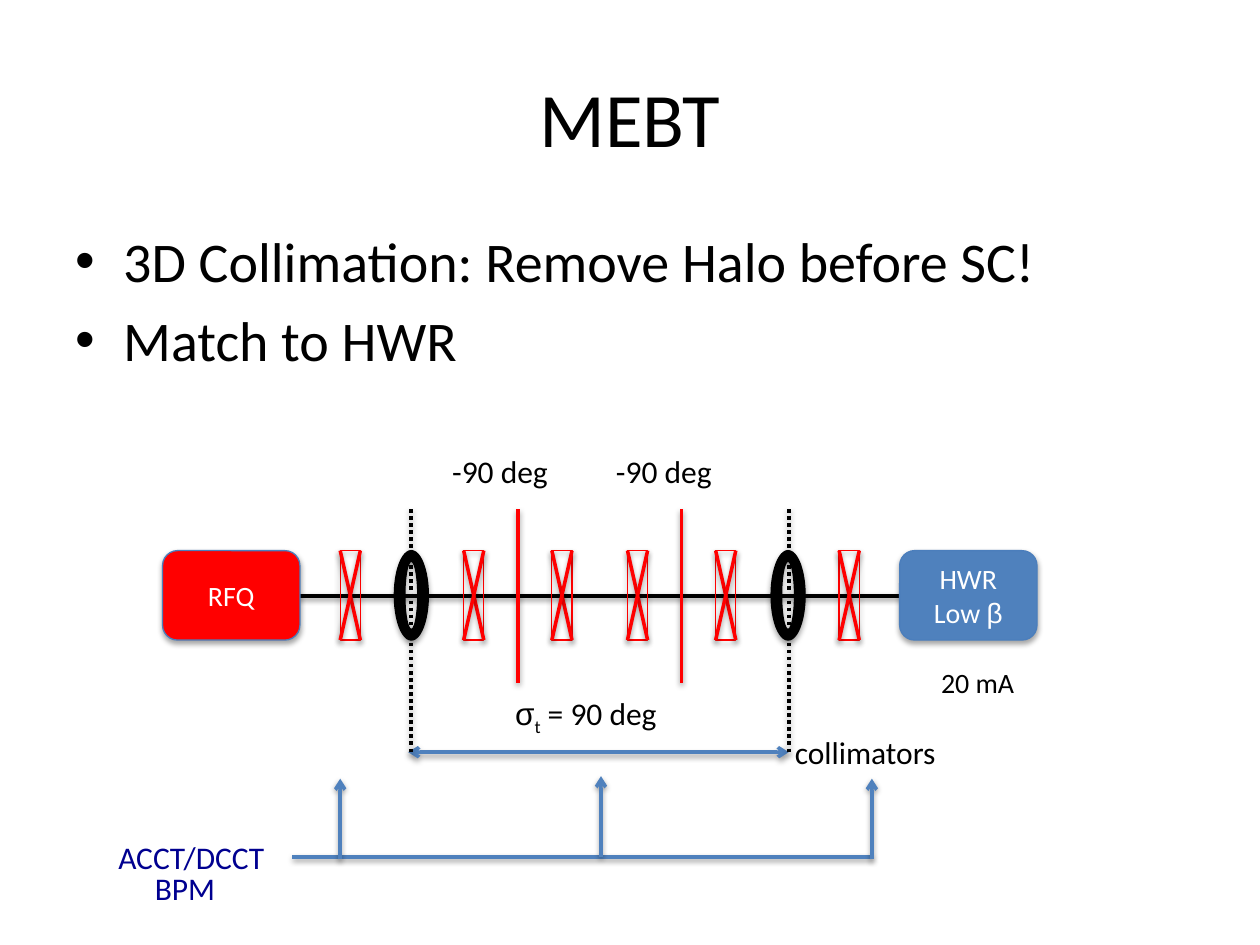
import lxml.etree
import pptx
import pptx.dml.color
import pptx.enum.dml
import pptx.enum.shapes
import pptx.enum.text
import pptx.oxml.ns
import pptx.util

PX = 9144  # EMU per px, 100 px to the inch
COLORS = {
    "text": "000000",
    "white": "FFFFFF",
    "red": "FF0000",
    "blue": "4F81BD",
    "outline": "4B7EBC",
    "navy": "000090",
}
SHAPES = pptx.enum.shapes.MSO_SHAPE
ALIGN = pptx.enum.text.PP_ALIGN
ANCHOR = pptx.enum.text.MSO_ANCHOR


def emu(*lengths):
    return [pptx.util.Emu(length * PX) for length in lengths]


def rgb(color):
    return pptx.dml.color.RGBColor.from_string(COLORS[color])


def add_child(parent, tag, **attributes):
    child = lxml.etree.SubElement(parent, pptx.oxml.ns.qn(tag))
    for key, value in attributes.items():
        child.set(key, str(value))
    return child


def add_shadow(effects, alpha, distance):
    shadow = add_child(effects, "a:outerShdw", blurRad=40000, dist=distance,
                       dir=5400000, rotWithShape=0)
    black = add_child(shadow, "a:srgbClr", val=COLORS["text"])
    add_child(black, "a:alpha", val=alpha * 1000)


def add_line(slide, start, end, color, arrows=(), dash=None):
    """Arrows names the ends that get a head: a:headEnd is the start, a:tailEnd the end."""
    line = slide.shapes.add_connector(
        pptx.enum.shapes.MSO_CONNECTOR.STRAIGHT, *emu(*start, *end))
    line.line.color.rgb = rgb(color)
    line.line.width = pptx.util.Pt(2)
    if dash:
        line.line.dash_style = dash
    for arrow in arrows:
        add_child(line.line._get_or_add_ln(), arrow, type="arrow")
    add_shadow(add_child(line._element.spPr, "a:effectLst"), 38, 20000)


def add_block(slide, kind, box, fill, outline):
    block = slide.shapes.add_shape(kind, *emu(*box))
    block.shadow.inherit = False
    if fill:
        block.fill.solid()
        block.fill.fore_color.rgb = rgb(fill)
    else:
        block.fill.background()
    block.line.color.rgb = rgb(outline)
    block.line.width = pptx.util.Pt(0.75)
    add_shadow(block._element.spPr.find(pptx.oxml.ns.qn("a:effectLst")), 35, 23000)
    return block


def add_run(paragraph, text, size, color="text", **formats):
    run = paragraph.add_run()
    run.text = text
    run.font.color.rgb = rgb(color)
    for key, value in {"size": pptx.util.Pt(size), "name": "Calibri", **formats}.items():
        setattr(run.font, key, value)
    return run


def add_label(slide, box, text="", size=18, color="text"):
    label = slide.shapes.add_textbox(*emu(*box))
    label.text_frame.word_wrap = False
    paragraph = label.text_frame.paragraphs[0]
    if text:
        add_run(paragraph, text, size, color)
    return paragraph


def add_title(slide, box):
    title = slide.shapes.title
    for key, value in zip(("left", "top", "width", "height"), emu(*box)):
        setattr(title, key, value)
    title.text_frame.vertical_anchor = ANCHOR.MIDDLE
    title.text_frame.paragraphs[0].alignment = ALIGN.CENTER
    add_run(title.text_frame.paragraphs[0], "MEBT", 44)


def add_goals(slide, box):
    frame = slide.shapes.add_textbox(*emu(*box)).text_frame
    frame.word_wrap = True
    for i, goal in enumerate(("3D Collimation: Remove Halo before SC!", "Match to HWR")):
        paragraph = frame.add_paragraph() if i else frame.paragraphs[0]
        paragraph.space_before = pptx.util.Pt(6.4)
        properties = paragraph._p.get_or_add_pPr()
        properties.set("marL", str(38 * PX))
        properties.set("indent", str(-38 * PX))
        add_child(properties, "a:buFont", typeface="Arial")
        add_child(properties, "a:buChar", char="•")
        add_run(paragraph, goal, 32)


def add_stage(slide, box, fill, *lines):
    """Rounded block at an end of the beam; each line is a list of (text, font)."""
    stage = add_block(slide, SHAPES.ROUNDED_RECTANGLE, box, fill, "outline")
    frame = stage.text_frame
    frame.vertical_anchor = ANCHOR.MIDDLE
    for i, line in enumerate(lines):
        paragraph = frame.add_paragraph() if i else frame.paragraphs[0]
        paragraph.alignment = ALIGN.CENTER
        for text, font in line:
            add_run(paragraph, text, 16, "white", name=font)


def add_magnet(slide, left, top, width, height):
    right, bottom = left + width, top + height
    add_block(slide, SHAPES.RECTANGLE, (left, top, width, height), None, "red")
    add_line(slide, (left, top), (right, bottom), "red")
    add_line(slide, (right, top), (left, bottom), "red")


def add_beamline(slide, box):
    left, top, width, height = box
    block_top, block_height = top + 84, 71
    stage_width, magnet_width, ring_width = 109, 16, 27

    def mirrored(offsets, part_width=0):
        """Left edges of the parts, then of their mirror images."""
        return [left + x for x in offsets] + [
            left + width - x - part_width for x in reversed(offsets)]

    add_line(slide, (left + 64, top + 120), (left + width - 46, top + 120), "text")
    add_stage(slide, (left, block_top, stage_width, block_height), "red",
              [("RFQ", "Calibri")])
    for x in mirrored((141, 239, 309), magnet_width):
        add_magnet(slide, x, block_top, magnet_width, block_height)
    for x in mirrored((184,), ring_width):
        ring = add_block(slide, SHAPES.DONUT, (x, block_top, ring_width, block_height),
                         "text", "text")
        ring.adjustments[0] = 0.31
    for x in mirrored((282,)):
        add_line(slide, (x, top + 51), (x, top + 189), "red")
        add_label(slide, (x - 62, top + 1, 122, 51), "-90 deg")

    axes = mirrored((197,))
    bottom = top + height
    add_line(slide, (axes[0] - 2, bottom), (axes[1], bottom), "blue",
             ("a:headEnd", "a:tailEnd"))
    advance = add_label(slide, (left + 270, top + 193, 134, 40))
    add_run(advance, "σ", 18, name="Arial")
    subscript = add_run(advance, "t", 18)
    subscript.font._element.set("baseline", "-25000")
    add_run(advance, " = 90 deg", 18)
    add_stage(slide, (left + width - stage_width, block_top, stage_width, block_height),
              "blue", [("HWR", "Calibri")], [("Low ", "Calibri"), ("β", "Arial")])
    for x in axes:
        add_line(slide, (x, top + 51), (x, bottom), "text",
                 dash=pptx.enum.dml.MSO_LINE.ROUND_DOT)
    add_label(slide, (left + 608, top + 170, 79, 37), "20 mA", 16)
    add_label(slide, (left + 492, top + 224, 134, 40), "collimators")


def add_diagnostics(slide, box):
    left, top, width, height = box
    bus = top + height
    right = left + width
    add_label(slide, (left, bus - 20, 139, 40), "ACCT/DCCT", color="navy")
    add_label(slide, (left + 29, bus + 5, 69, 40), "BPM", color="navy")
    add_line(slide, (left + 148, bus), (right, bus), "blue")
    for x, shift in ((left + 186, 2), (left + 393, 0), (right, 2)):
        add_line(slide, (x, bus + shift), (x, top + shift), "blue", ("a:tailEnd",))


def main():
    presentation = pptx.Presentation()
    presentation.slide_width, presentation.slide_height = emu(1000, 750)
    slide = presentation.slides.add_slide(
        presentation.slide_layouts.get_by_name("Title Only"))
    add_title(slide, (50, 30, 900, 125))
    add_goals(slide, (50, 175, 900, 216))
    add_beamline(slide, (129, 353, 694, 244))
    add_diagnostics(slide, (84, 616, 608, 64))
    presentation.save("out.pptx")


if __name__ == "__main__":
    main()
